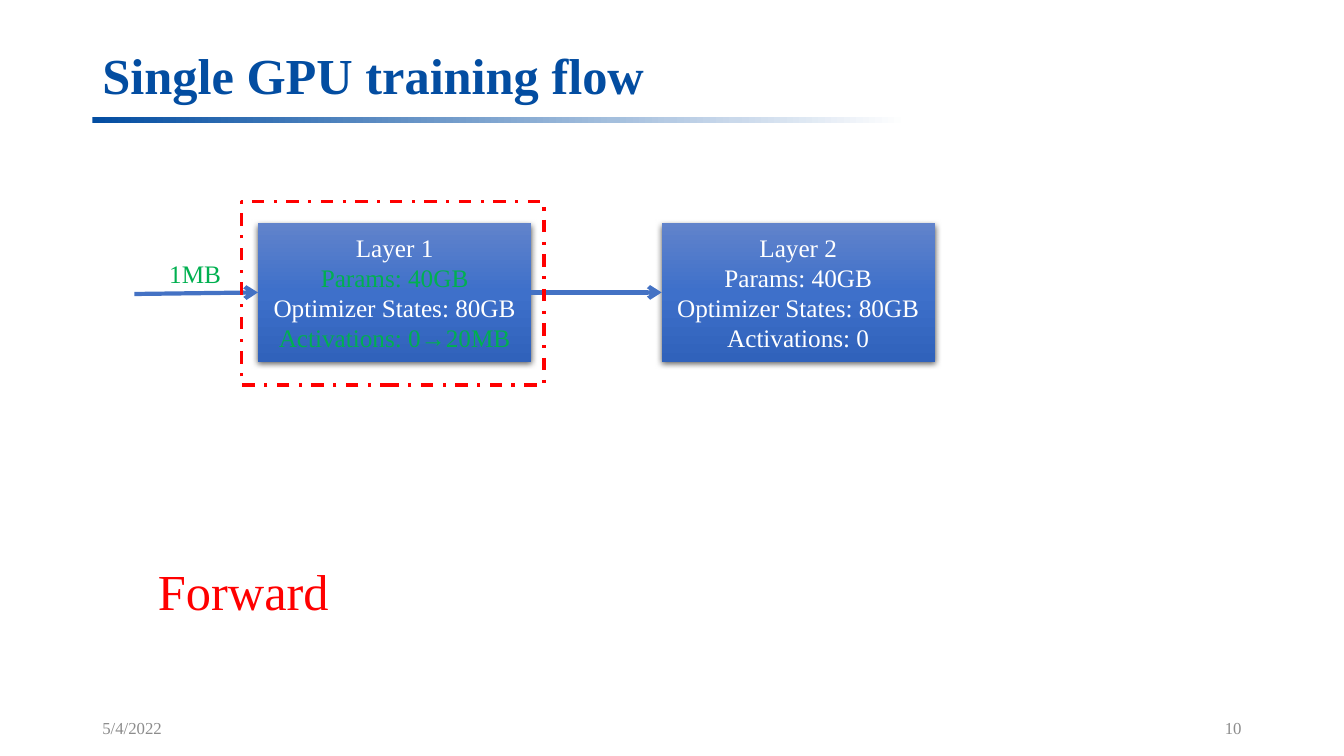
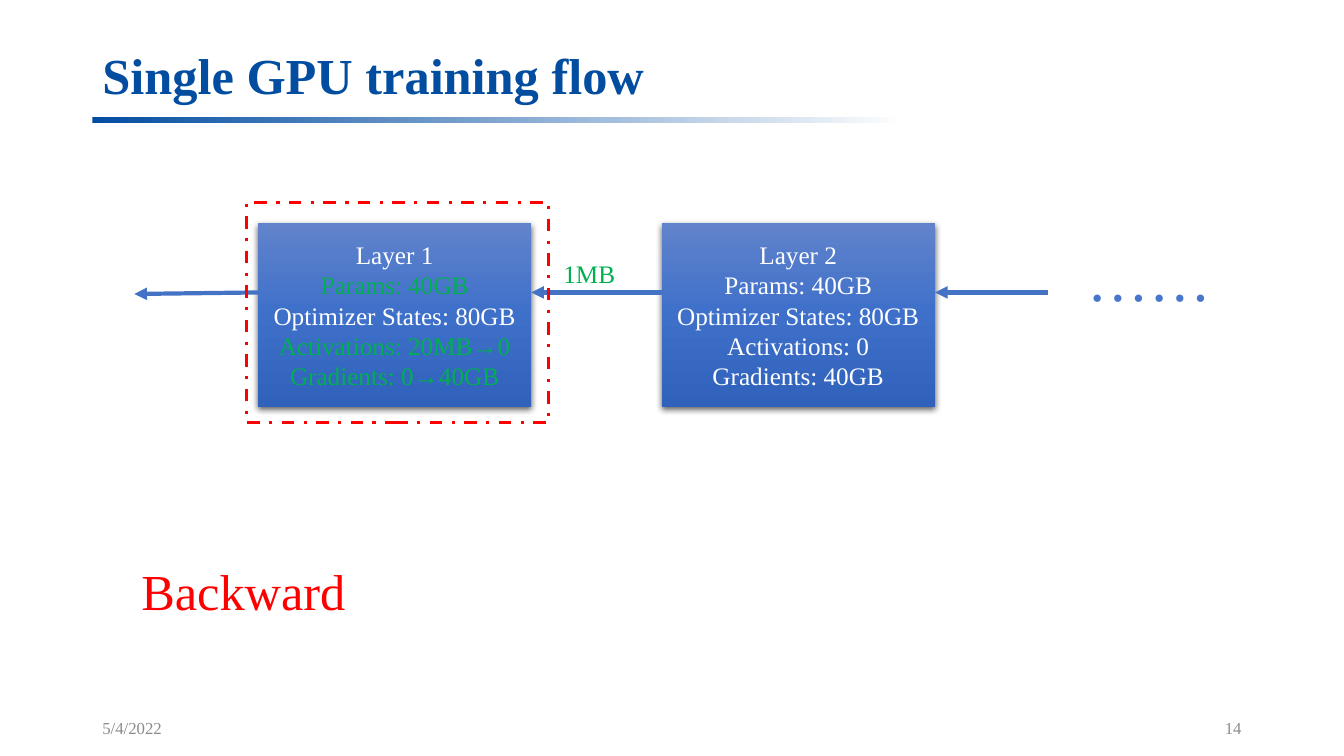
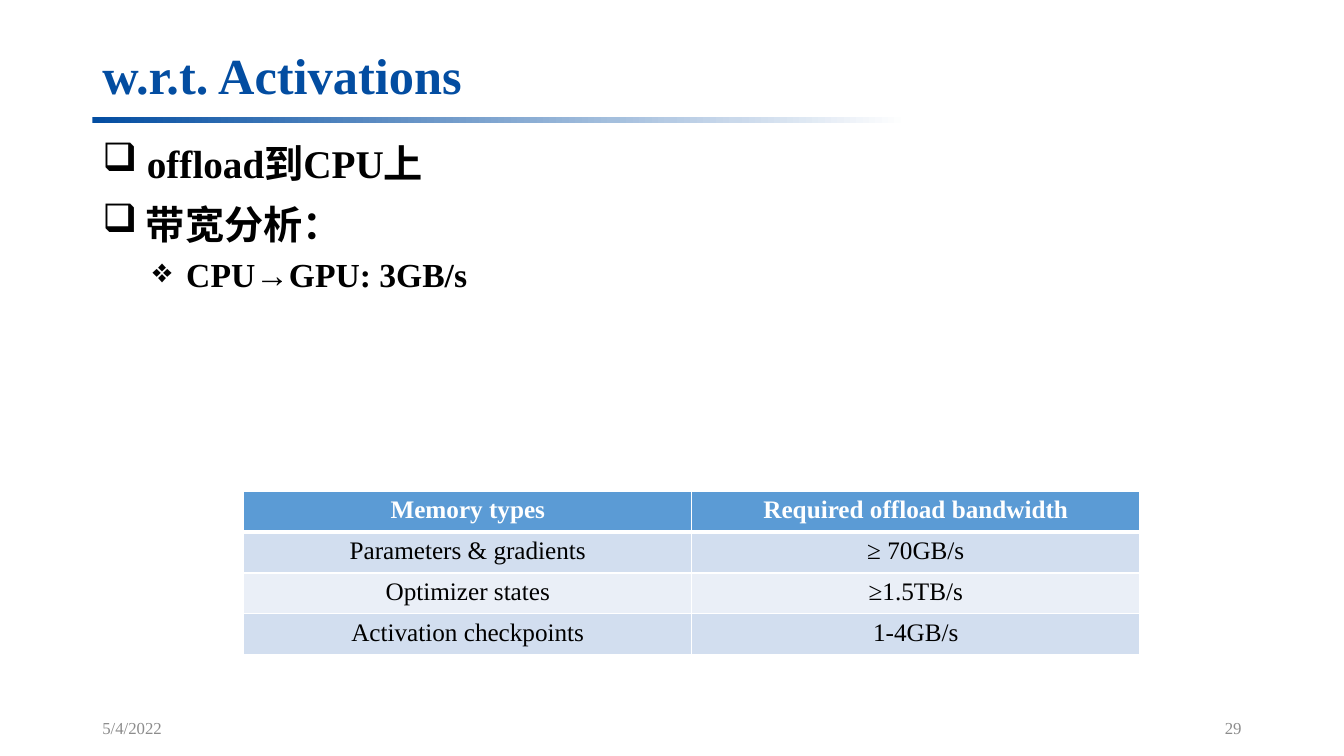
"""Build three slides on GPU training flow and activation offloading."""
from pptx import Presentation
from pptx import util as u
from pptx.dml.color import RGBColor
from pptx.enum import dml, shapes, text
from pptx.oxml import parse_xml
from pptx.oxml.ns import nsdecls, qn

FONT = "Times New Roman"
NAVY, BLUE, SOFT_BLUE, GREY = "034DA1", "4472C4", "4876CA", "8C8C8C"
RED, GREEN, WHITE, BLACK = "FF0000", "00B050", "FFFFFF", "000000"
HEADER, BANDS = "5B9BD5", ("D2DEEF", "EAEFF7")
RULE_STOPS = [(0, NAVY), (64, "A4BFDD"), (71, "B6CBE4"), (79, "CAD9EB"), (100, WHITE)]
LAYER_STOPS = [(0, "6183CB"), (50, "3E70CA"), (100, "3062BB")]
LEFT, CENTER, RIGHT = text.PP_ALIGN.LEFT, text.PP_ALIGN.CENTER, text.PP_ALIGN.RIGHT
LAYER_X, LAYER_Y, LAYER_W = (184.3, 472.6), 159.5, 195.2
FLOW_Y, FLOW_X = 208.9, 96


def rgb(value):
    """Turn a hex string into a colour."""
    return RGBColor.from_string(value)


def node(xml):
    """Parse one drawing element."""
    return parse_xml(xml.replace(" ", f" {nsdecls('a')} ", 1))


class Slides:
    """Hold the shared style and the page being drawn."""

    def __init__(self):
        self.deck = Presentation()
        self.deck.slide_width, self.deck.slide_height = u.Pt(960), u.Pt(540)
        self.page = None

    def start(self, title, number):
        """Add a page with its title, rule, date and number."""
        self.page = self.deck.slides.add_slide(self.deck.slide_layouts[5])
        box = self.page.shapes.title
        box.left, box.top, box.width, box.height = map(u.Pt, (66, 29, 828, 54))
        frame = box.text_frame
        frame.auto_size = text.MSO_AUTO_SIZE.NONE
        frame.vertical_anchor = text.MSO_ANCHOR.MIDDLE
        self.set_lines(frame, [title], 36, NAVY, bold=True)
        frame.paragraphs[0].line_spacing = 0.9
        rule = self.rectangle(66, 83.6, 582, 4.6)
        self.gradient(rule, RULE_STOPS, 0)
        for left, words, align in ((66, "5/4/2022", LEFT), (678, str(number), RIGHT)):
            footer = self.label(words, left, 505.5, 216, 28.8, 12, GREY, align, wrap=True)
            footer.vertical_anchor = text.MSO_ANCHOR.MIDDLE

    def set_lines(self, frame, lines, size, color, align=LEFT, bold=False, accents=()):
        """Fill a frame with lines, showing the accented ones in green."""
        frame.text = "\n".join(lines)
        for index, para in enumerate(frame.paragraphs):
            para.alignment = align
            for span in para.runs:
                span.font.name, span.font.size, span.font.bold = FONT, u.Pt(size), bold
                span.font.color.rgb = rgb(GREEN if index in accents else color)

    def label(self, words, left, top, width, height, size, color, align=LEFT, wrap=False):
        """Add a text box and return its frame."""
        box = self.page.shapes.add_textbox(*map(u.Pt, (left, top, width, height)))
        box.text_frame.word_wrap = wrap
        self.set_lines(box.text_frame, [words], size, color, align)
        return box.text_frame

    def rectangle(self, left, top, width, height):
        """Add a bare rectangle."""
        box = self.page.shapes.add_shape(
            shapes.MSO_SHAPE.RECTANGLE, *map(u.Pt, (left, top, width, height)))
        box.shadow.inherit = False
        box.fill.background()
        box.line.fill.background()
        return box

    def gradient(self, box, stops, angle):
        """Fill a shape with a linear gradient."""
        box.fill.gradient()
        box.fill.gradient_angle = angle
        stop_list = box._element.spPr.find(qn("a:gradFill")).find(qn("a:gsLst"))
        for old in list(stop_list):
            stop_list.remove(old)
        for place, color in stops:
            stop_list.append(node(f'<a:gs pos="{place * 1000}"><a:srgbClr val="{color}"/></a:gs>'))

    def layer(self, left, height, lines, accents=()):
        """Add a shaded layer box with its memory figures."""
        box = self.rectangle(left, LAYER_Y, LAYER_W, height)
        self.gradient(box, LAYER_STOPS, 270)
        box._element.spPr.find(qn("a:effectLst")).append(node(
            f'<a:outerShdw blurRad="{u.Pt(4.5)}" dist="{u.Pt(1.5)}" dir="5400000" algn="ctr" rotWithShape="0">'
            f'<a:srgbClr val="{BLACK}"><a:alpha val="63000"/></a:srgbClr></a:outerShdw>'))
        frame = box.text_frame
        frame.word_wrap, frame.vertical_anchor = True, text.MSO_ANCHOR.MIDDLE
        self.set_lines(frame, lines, 18, WHITE, CENTER, accents=accents)
        return box

    def arrow(self, start, end, tip, source=None, target=None):
        """Draw an arrow, joined to the right of source and left of target."""
        line = self.page.shapes.add_connector(
            shapes.MSO_CONNECTOR.STRAIGHT, *map(u.Pt, (*start, *end)))
        line.line.color.rgb, line.line.width = rgb(BLUE), u.Pt(3)
        properties = line._element.spPr
        properties.find(qn("a:ln")).append(node(f'<a:tailEnd type="{tip}"/>'))
        properties.append(node("<a:effectLst />"))
        if source is not None:
            line.begin_connect(source, 3)
        if target is not None:
            line.end_connect(target, 1)

    def highlight(self, left, top, width, height):
        """Frame the active layer with a red dash-dot outline."""
        box = self.rectangle(left, top, width, height)
        box.line.color.rgb, box.line.width = rgb(RED), u.Pt(2.25)
        box.line.dash_style = dml.MSO_LINE.DASH_DOT

    def bullets(self, items):
        """Add the body list from (level, words) pairs."""
        frame = self.label("", 66, 95.8, 828, 391, 28, BLACK, wrap=True)
        self.set_lines(frame, [words for _, words in items], 28, BLACK, bold=True)
        for para, (level, _) in zip(frame.paragraphs, items):
            margin, size, before, mark = ((18, 28, 10, "❑"), (54, 24, 5, "❖"))[level]
            para.level, para.space_before = level, u.Pt(before)
            para.runs[0].font.size = u.Pt(size)
            properties = para._p.get_or_add_pPr()
            properties.set("marL", str(u.Pt(margin)))
            properties.set("indent", str(u.Pt(-18)))
            properties.append(node(f'<a:buChar char="{mark}"/>'))

    def table(self, rows, left, top, width, height):
        """Add a banded table with white borders."""
        grid = self.page.shapes.add_table(
            len(rows), len(rows[0]), *map(u.Pt, (left, top, width, height))).table
        for r, row in enumerate(rows):
            for c, words in enumerate(row):
                cell = grid.cell(r, c)
                head = r == 0
                self.set_lines(cell.text_frame, [words], 18, WHITE if head else BLACK, CENTER, head)
                widths = {"L": 1, "R": 1, "T": 3 if r == 1 else 1, "B": 3 if head else 1}
                for side, weight in widths.items():
                    cell._tc.get_or_add_tcPr().append(node(
                        f'<a:ln{side} w="{u.Pt(weight)}"><a:solidFill><a:srgbClr val="{WHITE}"/>'
                        f'</a:solidFill></a:ln{side}>'))
                cell.fill.solid()
                cell.fill.fore_color.rgb = rgb(HEADER if head else BANDS[(r - 1) % 2])


def forward(slides):
    """Draw the forward pass."""
    slides.start("Single GPU training flow", 10)
    memory = ["Params: 40GB", "Optimizer States: 80GB"]
    first = slides.layer(LAYER_X[0], 98.8, ["Layer 1", *memory, "Activations: 0→20MB"], (1, 3))
    second = slides.layer(LAYER_X[1], 98.8, ["Layer 2", *memory, "Activations: 0"])
    slides.arrow((FLOW_X, 210), (LAYER_X[0], FLOW_Y), "arrow", target=first)
    slides.arrow((LAYER_X[0] + LAYER_W, FLOW_Y), (LAYER_X[1], FLOW_Y), "arrow", first, second)
    slides.label("1MB", 113.8, 180.7, 52, 29, 18, GREEN)
    slides.highlight(172.6, 144, 216, 131)
    slides.label("Forward", 105, 396.7, 137.5, 51, 36, RED, CENTER)


def backward(slides):
    """Draw the backward pass."""
    slides.start("Single GPU training flow", 14)
    memory = ["Params: 40GB", "Optimizer States: 80GB"]
    slides.layer(LAYER_X[0], 131, ["Layer 1", *memory, "Activations: 20MB→0 Gradients: 0→40GB"], (1, 3))
    slides.layer(LAYER_X[1], 131, ["Layer 2", *memory, "Activations: 0", "Gradients: 40GB"])
    ends = [left + LAYER_W for left in LAYER_X]
    slides.arrow((LAYER_X[0], FLOW_Y), (FLOW_X, 210), "triangle")
    slides.arrow((LAYER_X[1], FLOW_Y), (ends[0], FLOW_Y), "triangle")
    slides.arrow((748.8, FLOW_Y), (ends[1], FLOW_Y), "triangle")
    slides.label("1MB", 395.3, 180.7, 52, 29, 18, GREEN)
    slides.label("……", 769.7, 167.8, 103.7, 60.5, 44, SOFT_BLUE)
    slides.highlight(176, 144.7, 216, 157.2)
    slides.label("Backward", 92.9, 396.7, 162, 51, 36, RED, CENTER)


def activations(slides):
    """Draw the activation offload analysis."""
    slides.start("w.r.t. Activations", 29)
    slides.bullets([(0, " offload到CPU上"), (0, " 带宽分析："), (1, " CPU→GPU: 3GB/s")])
    slides.table([("Memory types", "Required offload bandwidth"),
                  ("Parameters & gradients", "≥ 70GB/s"),
                  ("Optimizer states", "≥1.5TB/s"),
                  ("Activation checkpoints", "1-4GB/s")], 174.2, 350.9, 640, 116.8)


def main():
    """Build and save the deck."""
    slides = Slides()
    forward(slides)
    backward(slides)
    activations(slides)
    slides.deck.save("out.pptx")


if __name__ == "__main__":
    main()
